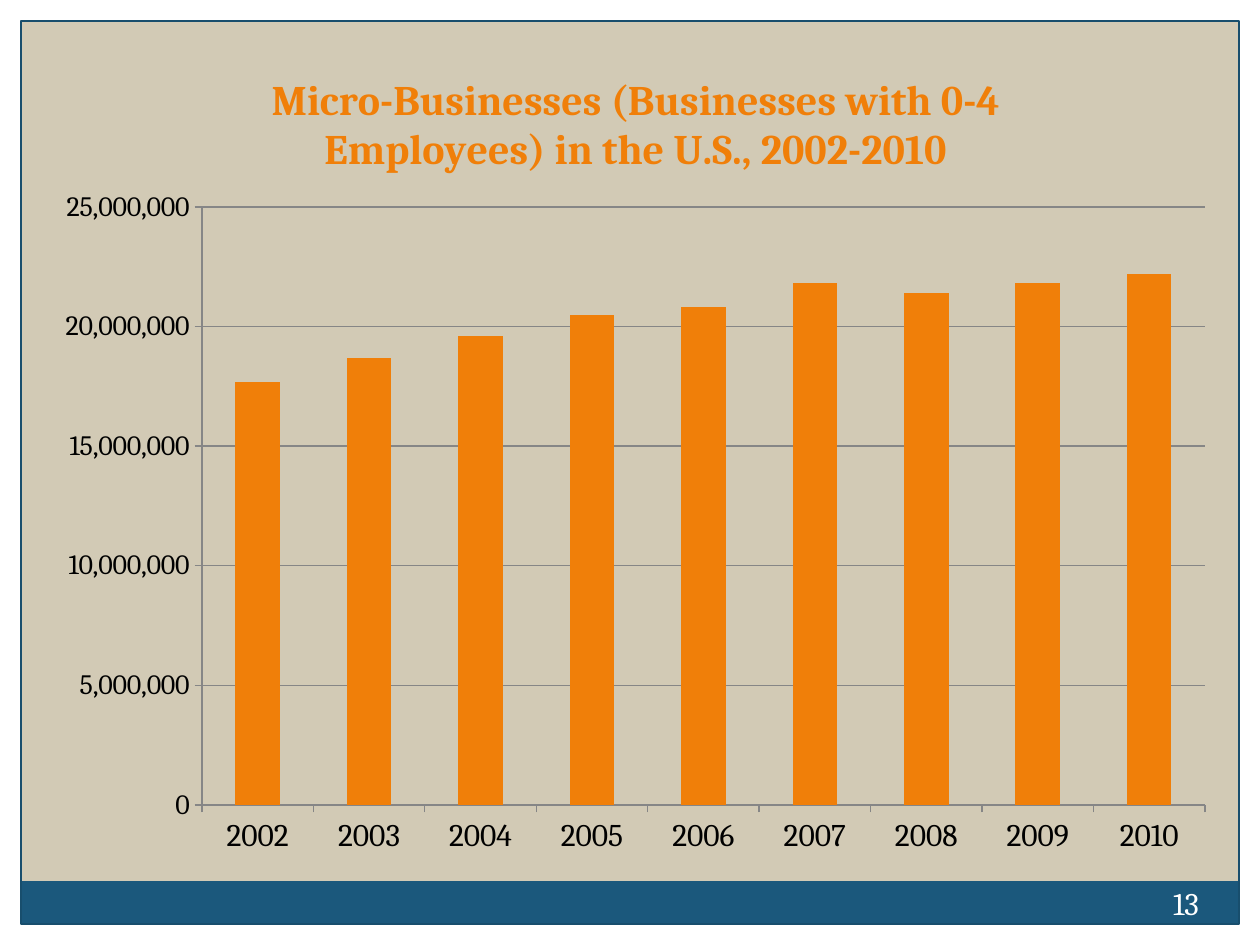
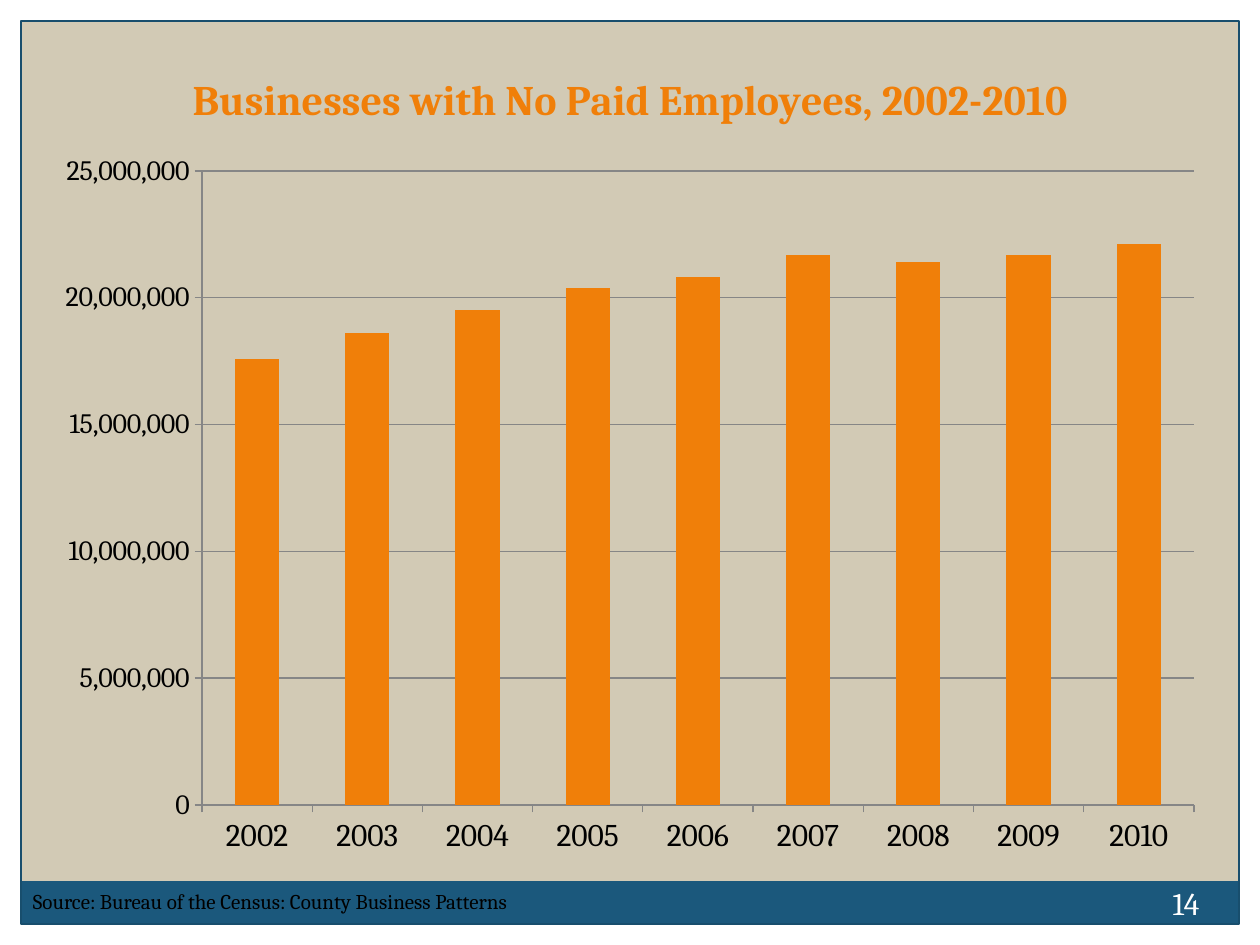
from pptx import Presentation
from pptx.chart.data import CategoryChartData
from pptx.dml.color import RGBColor
from pptx.enum.chart import XL_CHART_TYPE, XL_TICK_MARK
from pptx.enum.shapes import MSO_SHAPE
from pptx.enum.text import MSO_ANCHOR, PP_ALIGN
from pptx.oxml import parse_xml
from pptx.oxml.ns import nsdecls
from pptx.util import Emu, Pt

PX_PER_INCH = 126
SLIDE_W, SLIDE_H = 1260, 945
MARGIN = 21
BAND_TOP, BAND_H = 881, 43
FONT = "Cambria"
SAND, WHITE, BLACK = "D2CAB5", "FFFFFF", "000000"
NAVY, FRAME_BLUE, ORANGE, GRID_GREY = "1B587C", "184E6D", "F07F09", "868686"
YEARS = [str(year) for year in range(2002, 2011)]
MICRO_MILLIONS = [17.7, 18.7, 19.6, 20.5, 20.8, 21.8, 21.4, 21.8, 22.2]
UNPAID_MILLIONS = [17.6, 18.6, 19.5, 20.4, 20.8, 21.7, 21.4, 21.7, 22.1]


def px(length):
    """Turn pixels into EMU."""
    return Emu(round(length * 914400 / PX_PER_INCH))


def scaled(box):
    """Turn a left, top, width, height box into EMU."""
    return [px(length) for length in box]


def color(hex_code):
    """Turn a hex string into a colour."""
    return RGBColor.from_string(hex_code)


def style_font(font, size, hex_code, bold=False):
    """Give a font the deck's typeface with a size and colour."""
    font.name, font.size, font.bold = FONT, Pt(size), bold
    font.color.rgb = color(hex_code)


def add_rect(slide, box, fill=None, line=None):
    """Draw a flat rectangle, filled or outlined."""
    rect = slide.shapes.add_shape(MSO_SHAPE.RECTANGLE, *scaled(box))
    rect.shadow.inherit = False
    if fill:
        rect.fill.solid()
        rect.fill.fore_color.rgb = color(fill)
    else:
        rect.fill.background()
    if line:
        rect.line.color.rgb = color(line)
        rect.line.width = Pt(0.75)
    else:
        rect.line.fill.background()


def add_text(slide, box, text, size, hex_code, inset, align=PP_ALIGN.LEFT):
    """Add one line of text, centred vertically in its box."""
    textbox = slide.shapes.add_textbox(*scaled(box))
    frame = textbox.text_frame
    frame.word_wrap = True
    frame.vertical_anchor = MSO_ANCHOR.MIDDLE
    frame.margin_left = frame.margin_right = px(inset)
    frame.margin_top = frame.margin_bottom = px(6)
    frame.text = text
    frame.paragraphs[0].alignment = align
    style_font(frame.paragraphs[0].runs[0].font, size, hex_code)


def add_page_frame(slide, number):
    """Draw the white border, footer band, outline and page number."""
    for border in (
        (0, SLIDE_H - MARGIN, SLIDE_W, MARGIN),
        (0, 0, SLIDE_W, MARGIN),
        (SLIDE_W - MARGIN, 0, MARGIN, SLIDE_H),
        (0, 0, MARGIN, SLIDE_H),
    ):
        add_rect(slide, border, fill=WHITE)
    inner_w, inner_h = SLIDE_W - 2 * MARGIN, SLIDE_H - 2 * MARGIN
    add_rect(slide, (MARGIN, BAND_TOP, inner_w, BAND_H), fill=NAVY)
    add_rect(slide, (MARGIN, MARGIN, inner_w, inner_h), line=FRAME_BLUE)
    add_text(slide, (1144, 861, 84, 84), str(number), 18, WHITE, 6, PP_ALIGN.CENTER)


def place_plot(chart, box, plot):
    """Fix the inner plot area, given in slide pixels, within the chart box."""
    left, top, width, height = box
    fractions = {
        "x": (plot[0] - left) / width,
        "y": (plot[1] - top) / height,
        "w": plot[2] / width,
        "h": plot[3] / height,
    }
    modes = "".join(f'<c:{axis}Mode val="edge"/>' for axis in "xy")
    sizes = "".join(f'<c:{key} val="{part:.4f}"/>' for key, part in fractions.items())
    plot_area = chart._chartSpace.chart.plotArea
    for layout in plot_area.findall("{*}layout"):
        plot_area.remove(layout)
    plot_area.insert(0, parse_xml(
        f'<c:layout {nsdecls("c")}><c:manualLayout><c:layoutTarget val="inner"/>'
        f"{modes}{sizes}</c:manualLayout></c:layout>"
    ))


def style_axis(axis, size):
    """Give an axis outer ticks, a grey line and black labels."""
    axis.major_tick_mark = XL_TICK_MARK.OUTSIDE
    axis.minor_tick_mark = XL_TICK_MARK.NONE
    axis.format.line.color.rgb = color(GRID_GREY)
    axis.format.line.width = Pt(0.75)
    style_font(axis.tick_labels.font, size, BLACK)


def add_business_chart(slide, box, plot, title, millions):
    """Add a titled column chart of yearly business counts."""
    counts = CategoryChartData(number_format="#,##0")
    counts.categories = YEARS
    counts.add_series("Series 1", [round(value * 1_000_000) for value in millions])
    chart = slide.shapes.add_chart(
        XL_CHART_TYPE.COLUMN_CLUSTERED, *scaled(box), counts
    ).chart
    style_font(chart.font, 12, BLACK)
    chart.has_legend = False
    chart.has_title = True
    heading = chart.chart_title.text_frame
    heading.text = title
    style_font(heading.paragraphs[0].runs[0].font, 24, ORANGE, bold=True)
    chart.chart_title.include_in_layout = False

    columns = chart.plots[0]
    columns.gap_width = 150
    columns.vary_by_categories = False
    columns.series[0].format.fill.solid()
    columns.series[0].format.fill.fore_color.rgb = color(ORANGE)

    style_axis(chart.category_axis, 18)
    count_axis = chart.value_axis
    style_axis(count_axis, 16)
    count_axis.minimum_scale, count_axis.maximum_scale = 0, 25_000_000
    count_axis.major_unit = 5_000_000
    count_axis.tick_labels.number_format = "#,##0"
    count_axis.tick_labels.number_format_is_linked = False
    count_axis.major_gridlines.format.line.color.rgb = color(GRID_GREY)
    count_axis.major_gridlines.format.line.width = Pt(0.75)
    place_plot(chart, box, plot)


def add_chart_slide(deck, number, box, plot, title, millions, source=None):
    """Add a framed slide with one chart and an optional source line."""
    slide = deck.slides.add_slide(deck.slide_layouts[6])
    add_page_frame(slide, number)
    add_business_chart(slide, box, plot, title, millions)
    if source:
        add_text(slide, (MARGIN, 882, 546, 38), source, 12, BLACK, 12)


def main():
    """Build both slides and save the deck."""
    deck = Presentation()
    deck.slide_width, deck.slide_height = px(SLIDE_W), px(SLIDE_H)
    background = deck.slide_master.background.fill
    background.solid()
    background.fore_color.rgb = color(SAND)
    add_chart_slide(
        deck, 13, (42, 42, 1187, 829), (202, 207, 1003, 598),
        "Micro-Businesses (Businesses with 0-4 Employees) in the U.S., 2002-2010",
        MICRO_MILLIONS,
    )
    add_chart_slide(
        deck, 14, (42, 42, 1176, 829), (202, 171, 992, 634),
        "Businesses with No Paid Employees, 2002-2010",
        UNPAID_MILLIONS,
        source="Source: Bureau of the Census: County Business Patterns",
    )
    deck.save("out.pptx")


if __name__ == "__main__":
    main()
